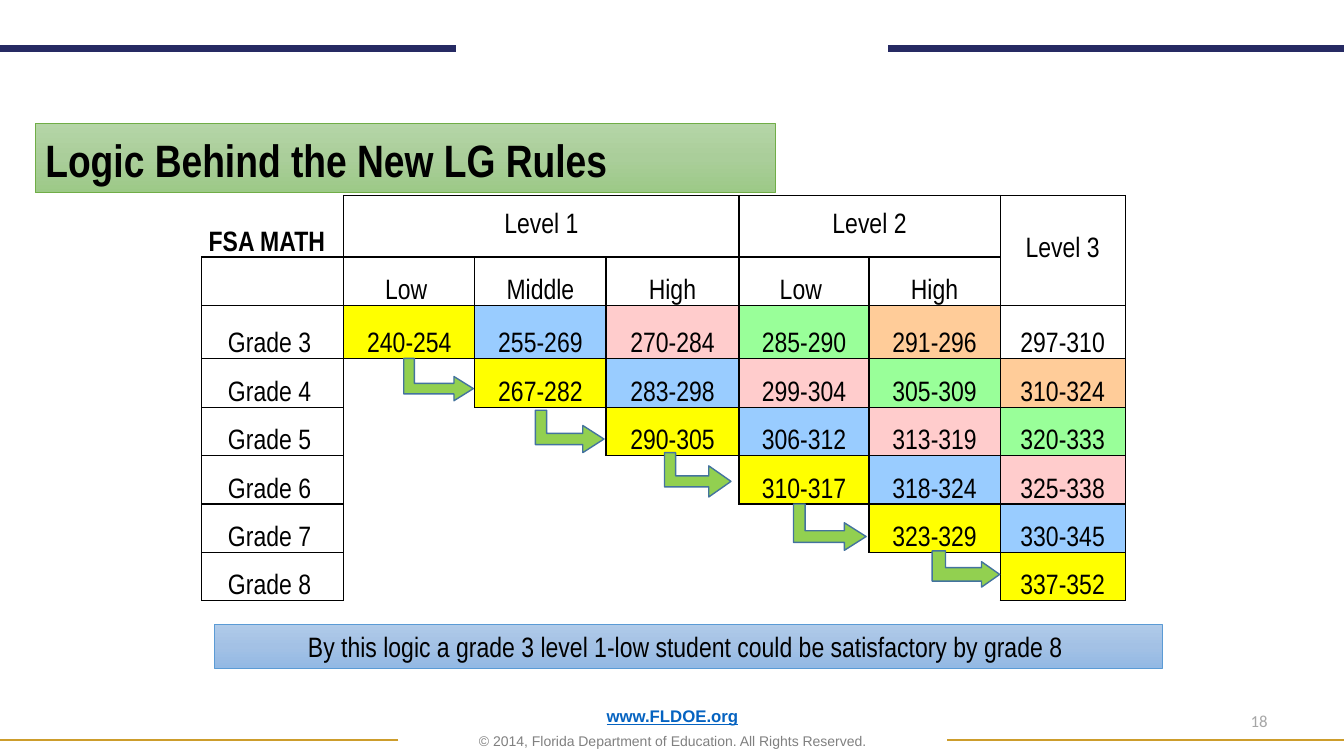
from copy import deepcopy

from lxml.etree import SubElement
from pptx import Presentation
from pptx.dml.color import RGBColor
from pptx.enum.shapes import MSO_CONNECTOR, MSO_SHAPE
from pptx.enum.text import MSO_ANCHOR, PP_ALIGN
from pptx.oxml.ns import qn
from pptx.util import Inches, Pt

BLACK = RGBColor(0x00, 0x00, 0x00)
WHITE = RGBColor(0xFF, 0xFF, 0xFF)
NAVY = RGBColor(0x26, 0x2A, 0x63)
GOLD = RGBColor(0xCD, 0x9D, 0x2C)
LINK_BLUE = RGBColor(0x05, 0x63, 0xC1)
GRAY = RGBColor(0x80, 0x80, 0x80)
LIGHT_GRAY = RGBColor(0xA6, 0xA6, 0xA6)
ARROW_GREEN = RGBColor(0x92, 0xD0, 0x50)
ARROW_EDGE = RGBColor(0x43, 0x73, 0x9E)
TITLE_EDGE = RGBColor(0x70, 0xAD, 0x47)
CAPTION_EDGE = RGBColor(0x5B, 0x9B, 0xD5)
TITLE_GRADIENT = [RGBColor(0xB5, 0xD5, 0xA7), RGBColor(0xAA, 0xCE, 0x9A), RGBColor(0x9C, 0xC9, 0x87)]
CAPTION_GRADIENT = [RGBColor(0xB1, 0xCB, 0xE9), RGBColor(0xA3, 0xC1, 0xE5), RGBColor(0x93, 0xB9, 0xE4)]
# Yellow, blue, pink, green, orange, white: one step per score band
BAND_COLORS = [RGBColor(0xFF, 0xFF, 0x00), RGBColor(0x99, 0xCC, 0xFF), RGBColor(0xFF, 0xCC, 0xCC),
               RGBColor(0x99, 0xFF, 0x99), RGBColor(0xFF, 0xCC, 0x99), WHITE]

COLUMN_WIDTHS = [1.41, 1.3, 1.3, 1.32, 1.29, 1.3, 1.24]
ROW_HEIGHTS = [0.61, 0.48, 0.53] + [0.48] * 5
HEADERS = [["FSA MATH", "Level 1", "", "", "Level 2", "", "Level 3"],
           ["", "Low ", "Middle", "High", "Low ", "High", ""]]
MERGES = [((0, 1), (0, 3)), ((0, 4), (0, 5)), ((0, 6), (1, 6))]
SCORES = [
    ["240-254", "255-269", "270-284", "285-290", "291-296", "297-310"],
    ["267-282", "283-298", "299-304", "305-309", "310-324"],
    ["290-305", "306-312", "313-319", "320-333"],
    ["310-317", "318-324", "325-338"],
    ["323-329", "330-345"],
    ["337-352"],
]
ARROWS = [
    ((4.14, 3.42, 0.42, 0.69), (0.25, 0.285, 0.459)),
    ((5.44, 3.94, 0.42, 0.68), (0.265, 0.32, 0.5)),
    ((6.7, 4.38, 0.44, 0.66), (0.25, 0.35, 0.5)),
    ((8, 4.87, 0.46, 0.72), (0.25, 0.297, 0.47)),
    ((9.4, 5.31, 0.36, 0.67), (0.369, 0.35, 0.5)),
]


def write(paragraph, text, size=20, font="Arial Narrow", color=BLACK, bold=False,
          underline=False, align=PP_ALIGN.CENTER, spacing=1.0, before=0):
    paragraph.alignment = align
    paragraph.line_spacing = spacing
    paragraph.space_before = Pt(before)
    run = paragraph.add_run()
    run.text = text
    run.font.size = Pt(size)
    run.font.name = font
    run.font.bold = bold
    run.font.underline = underline
    run.font.color.rgb = color


def is_open(row, column):
    """Tell whether a cell draws no border of its own."""
    return (row, column) == (0, 0) or (row >= 3 and 1 <= column <= row - 2)


def set_borders(cell, row, column):
    """Rule each side that touches a ruled cell, and clear the others."""
    neighbours = {"L": (row, column - 1), "R": (row, column + 1),
                  "T": (row - 1, column), "B": (row + 1, column)}
    properties = cell._tc.get_or_add_tcPr()
    for side, (next_row, next_column) in neighbours.items():
        inside = 0 <= next_row < len(ROW_HEIGHTS) and 0 <= next_column < len(COLUMN_WIDTHS)
        ruled = not is_open(row, column) or (inside and not is_open(next_row, next_column))
        line = SubElement(properties, qn(f"a:ln{side}"), w=str(Pt(1)))
        if ruled:
            fill = SubElement(line, qn("a:solidFill"))
            SubElement(fill, qn("a:srgbClr"), val=str(BLACK))
        else:
            SubElement(line, qn("a:noFill"))


class LogicSlide:
    def __init__(self, presentation):
        self.slide = presentation.slides.add_slide(presentation.slide_layouts[5])
        self.shapes = self.slide.shapes

    def place(self, shape, box):
        shape.left, shape.top, shape.width, shape.height = map(Inches, box)

    def paint_gradient(self, shape, colors, edge):
        """Fill from top to bottom through three colours."""
        shape.fill.gradient()
        shape.fill.gradient_angle = 270
        stop_list = shape._element.spPr.find(qn("a:gradFill")).find(qn("a:gsLst"))
        stop_list.insert(1, deepcopy(stop_list[0]))
        for index, (stop, color) in enumerate(zip(shape.fill.gradient_stops, colors)):
            stop.color.rgb = color
            stop.position = index / 2
        shape.line.color.rgb = edge
        shape.line.width = Pt(0.5)

    def rule(self, start, end, y, color, width):
        line = self.shapes.add_connector(MSO_CONNECTOR.STRAIGHT, Inches(start), Inches(y),
                                         Inches(end), Inches(y))
        line.line.color.rgb = color
        line.line.width = Pt(width)
        SubElement(line._element.spPr, qn("a:effectLst"))

    def title(self, text, box):
        title = self.shapes.title
        self.place(title, box)
        self.paint_gradient(title, TITLE_GRADIENT, TITLE_EDGE)
        title.text_frame.vertical_anchor = MSO_ANCHOR.BOTTOM
        write(title.text_frame.paragraphs[0], text, size=32.4, bold=True,
              align=PP_ALIGN.LEFT, spacing=0.9)

    def text_box(self, box, anchor):
        frame = self.shapes.add_textbox(*map(Inches, box)).text_frame
        frame.word_wrap = True
        frame.vertical_anchor = anchor
        return frame

    def caption(self, text, box):
        shape = self.shapes.add_shape(MSO_SHAPE.RECTANGLE, *map(Inches, box))
        shape.shadow.inherit = False
        self.paint_gradient(shape, CAPTION_GRADIENT, CAPTION_EDGE)
        shape.text_frame.word_wrap = True
        shape.text_frame.vertical_anchor = MSO_ANCHOR.MIDDLE
        write(shape.text_frame.paragraphs[0], text)

    def arrow(self, box, adjustments):
        shape = self.shapes.add_shape(MSO_SHAPE.BENT_UP_ARROW, *map(Inches, box))
        shape.rotation = 90
        for index, value in enumerate(adjustments):
            shape.adjustments[index] = value
        shape.shadow.inherit = False
        shape.fill.solid()
        shape.fill.fore_color.rgb = ARROW_GREEN
        shape.line.color.rgb = ARROW_EDGE
        shape.line.width = Pt(1)

    def score_table(self, left, top):
        rows = HEADERS + [[f"Grade {index + 3} "] + [""] * index + scores
                          for index, scores in enumerate(SCORES)]
        table = self.shapes.add_table(len(ROW_HEIGHTS), len(COLUMN_WIDTHS), Inches(left), Inches(top),
                                      Inches(sum(COLUMN_WIDTHS)), Inches(sum(ROW_HEIGHTS))).table
        for column, width in zip(table.columns, COLUMN_WIDTHS):
            column.width = Inches(width)
        for row, height in zip(table.rows, ROW_HEIGHTS):
            row.height = Inches(height)
        for row, texts in enumerate(rows):
            for column, text in enumerate(texts):
                self.score_cell(table.cell(row, column), row, column, text)
        for first, last in MERGES:
            table.cell(*first).merge(table.cell(*last))

    def score_cell(self, cell, row, column, text):
        set_borders(cell, row, column)
        is_score = row >= 2 and column >= row - 1
        cell.fill.solid()
        cell.fill.fore_color.rgb = BAND_COLORS[column - row + 1] if is_score else WHITE
        cell.margin_left = cell.margin_right = Inches(0.07)
        cell.margin_top = cell.margin_bottom = 0
        is_level = row == 0 and column > 0
        cell.vertical_anchor = MSO_ANCHOR.MIDDLE if is_level else MSO_ANCHOR.BOTTOM
        if text:
            is_corner = (row, column) == (0, 0)
            write(cell.text_frame.paragraphs[0], text, bold=is_corner,
                  align=PP_ALIGN.LEFT if is_corner else PP_ALIGN.CENTER)


def main():
    presentation = Presentation()
    presentation.slide_width = Inches(13.33)
    presentation.slide_height = Inches(7.5)
    page = LogicSlide(presentation)

    footer = page.text_box((0.92, 7.06, 11.5, 0.43), MSO_ANCHOR.BOTTOM)
    write(footer.paragraphs[0], "www.FLDOE.org", size=12, font="Arial", color=LINK_BLUE,
          bold=True, underline=True, spacing=0.9)
    write(footer.add_paragraph(), "© 2014, Florida Department of Education. All Rights Reserved.",
          size=10, font="Arial", color=GRAY, spacing=0.9, before=6)
    page.rule(3.95, 0, 7.34, GOLD, 1)
    page.rule(4.52, 0, 0.48, NAVY, 5)
    page.rule(13.33, 8.81, 0.48, NAVY, 5)
    page.rule(13.33, 9.39, 7.34, GOLD, 1)

    page.title("Logic Behind the New LG Rules", (0.35, 1.22, 7.34, 0.69))
    number = page.text_box((9.56, 6.95, 3.11, 0.4), MSO_ANCHOR.MIDDLE)
    write(number.paragraphs[0], "18", size=12, font="Calibri", color=LIGHT_GRAY, align=PP_ALIGN.RIGHT)
    page.score_table(2, 1.94)
    for box, adjustments in ARROWS:
        page.arrow(box, adjustments)
    page.caption("By this logic a grade 3 level 1-low student could be satisfactory by grade 8 ",
                 (2.13, 6.19, 9.4, 0.44))
    presentation.save("out.pptx")


if __name__ == "__main__":
    main()
